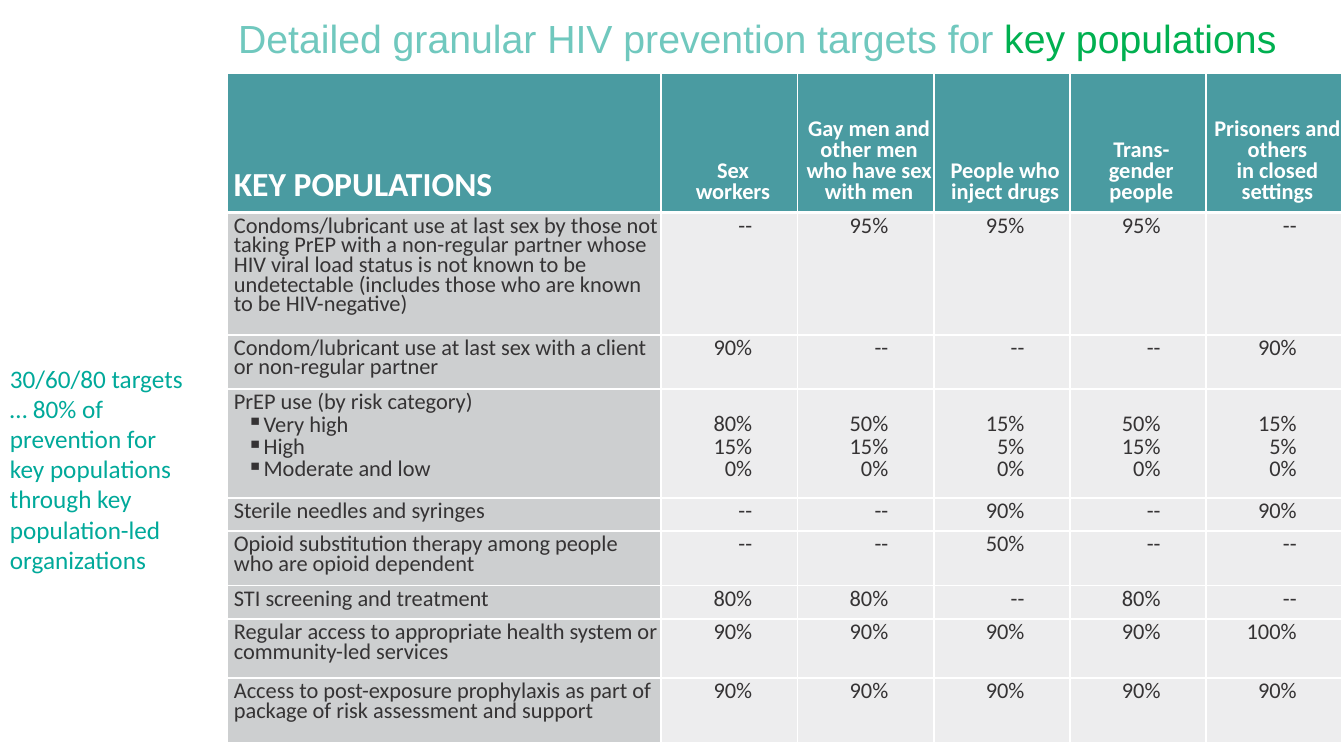
from lxml import etree
from pptx import Presentation
from pptx import util as u
from pptx.dml.color import RGBColor
from pptx.enum import text
from pptx.oxml.ns import qn

COLORS = {
    "title": "70C8BE",
    "accent": "00B050",
    "note": "00A99A",
    "header": "4A9BA1",
    "label": "CDCFD0",
    "value": "EDEDEE",
    "body": "353334",
    "white": "FFFFFF",
}

COLUMN_WIDTHS = [4.31] + [1.35] * 5
ROW_HEIGHTS = [1.38, 1.21, 0.54, 1.08, 0.33, 0.54, 0.33, 0.59, 0.64]
HEADINGS = [
    "KEY POPULATIONS",
    "Sex\vworkers",
    "Gay men and other men who have sex with men",
    "People who\vinject drugs",
    "Trans-\vgender\vpeople",
    "Prisoners and others\nin closed\vsettings",
]
TARGETS = [
    ("Condoms/lubricant use at last sex by those not taking PrEP with a "
     "non-regular partner whose HIV viral load status is not known to be "
     "undetectable (includes those who are known to be HIV-negative)",
     ["--", "95%", "95%", "95%", "--"]),
    ("Condom/lubricant use at last sex with a client or non-regular partner",
     ["90%", "--", "--", "--", "90%"]),
    ("PrEP use (by risk category)\nVery high\nHigh\nModerate and low",
     ["80%\n15%\n0%", "50%\n15%\n0%", "15%\n5%\n0%", "50%\n15%\n0%", "15%\n5%\n0%"]),
    ("Sterile needles and syringes", ["--", "--", "90%", "--", "90%"]),
    ("Opioid substitution therapy among people who are opioid dependent",
     ["--", "--", "50%", "--", "--"]),
    ("STI screening and treatment", ["80%", "80%", "--", "80%", "--"]),
    ("Regular access to appropriate health system or community-led services",
     ["90%", "90%", "90%", "90%", "100%"]),
    ("Access to post-exposure prophylaxis as part of package of risk "
     "assessment and support", ["90%"] * 5),
]


class TargetSlide:
    def __init__(self, deck):
        self.slide = deck.slides.add_slide(deck.slide_layouts[5])

    def style_run(self, run, size, color, font="Calibri", bold=False):
        run.font.name = font
        run.font.size = u.Pt(size)
        run.font.bold = bold
        run.font.color.rgb = RGBColor.from_string(COLORS[color])

    def place_margins(self, box, left, top, right, bottom):
        box.margin_left, box.margin_top = u.Inches(left), u.Inches(top)
        box.margin_right, box.margin_bottom = u.Inches(right), u.Inches(bottom)

    def title(self, lead, emphasis, left, top, width, height):
        heading = self.slide.shapes.title
        heading.left, heading.top = u.Inches(left), u.Inches(top)
        heading.width, heading.height = u.Inches(width), u.Inches(height)
        frame = heading.text_frame
        frame.auto_size = text.MSO_AUTO_SIZE.NONE
        frame.vertical_anchor = text.MSO_ANCHOR.MIDDLE
        self.place_margins(frame, 0, 0, 0, 0)
        frame.text = lead
        line = frame.paragraphs[0]
        line.alignment = text.PP_ALIGN.CENTER
        self.style_run(line.runs[0], 28, "title", "Arial")
        key_term = line.add_run()
        key_term.text = emphasis
        self.style_run(key_term, 28, "accent", "Arial")

    def note(self, wording, left, top, width, height):
        box = self.slide.shapes.add_textbox(
            u.Inches(left), u.Inches(top), u.Inches(width), u.Inches(height))
        frame = box.text_frame
        frame.word_wrap = True
        frame.text = wording
        self.style_run(frame.paragraphs[0].runs[0], 18, "note")

    def bullet(self, paragraph):
        props = paragraph._p.get_or_add_pPr()
        props.set("marL", str(u.Inches(0.25)))
        props.set("indent", str(u.Inches(-0.12)))
        etree.SubElement(props, qn("a:buChar")).set("char", "▪")
        tabs = etree.SubElement(props, qn("a:tabLst"))
        tab = etree.SubElement(tabs, qn("a:tab"))
        tab.set("pos", str(u.Inches(0.35)))
        tab.set("algn", "l")

    def borders(self, cell, top=1.5, bottom=1.5):
        props = cell._tc.get_or_add_tcPr()
        for side, width in (("L", 1.5), ("R", 1.5), ("T", top), ("B", bottom)):
            line = etree.SubElement(props, qn(f"a:ln{side}"))
            line.set("w", str(u.Pt(width)))
            fill = etree.SubElement(line, qn("a:solidFill"))
            etree.SubElement(fill, qn("a:srgbClr")).set("val", COLORS["white"])

    def cell(self, cell, wording, fill, align, spacing, size=16, color="body",
             bold=False, bulleted=False):
        cell.fill.solid()
        cell.fill.fore_color.rgb = RGBColor.from_string(COLORS[fill])
        cell.text_frame.text = wording
        paragraphs = cell.text_frame.paragraphs
        for index, paragraph in enumerate(paragraphs):
            if bulleted and index:
                self.bullet(paragraph)
            paragraph.alignment = align
            paragraph.line_spacing = u.Pt(spacing)
            if len(paragraphs) > 1 and fill != "header":
                paragraph.space_after = u.Pt(2)
            for run in paragraph.runs:
                self.style_run(run, size, color, bold=bold)

    def header_row(self, cells):
        for column, (cell, heading) in enumerate(zip(cells, HEADINGS)):
            self.borders(cell, bottom=2.25)
            self.place_margins(cell, 0.07, 0.07, 0, 0.07)
            cell.vertical_anchor = text.MSO_ANCHOR.BOTTOM
            align = text.PP_ALIGN.CENTER if column else text.PP_ALIGN.LEFT
            self.cell(cell, heading, "header", align, 15,
                      16 if column else 24, "white", True)

    def target_row(self, cells, label, values, top_border):
        has_categories = "\n" in label
        # Values of a row with categories start one line lower, beside the first category.
        value_top = 0.29 if has_categories else 0.07
        for column, (cell, wording) in enumerate(zip(cells, [label] + values)):
            self.borders(cell, top=top_border)
            if column:
                self.place_margins(cell, 0.07, value_top, 0.45, 0)
                self.cell(cell, wording, "value", text.PP_ALIGN.RIGHT, 14)
            else:
                self.place_margins(cell, 0.07, 0.07, 0, 0)
                self.cell(cell, wording, "label", text.PP_ALIGN.LEFT, 14,
                          bulleted=has_categories)

    def target_table(self, left, top):
        table = self.slide.shapes.add_table(
            len(ROW_HEIGHTS), len(COLUMN_WIDTHS), u.Inches(left), u.Inches(top),
            u.Inches(sum(COLUMN_WIDTHS)), u.Inches(sum(ROW_HEIGHTS))).table
        table.horz_banding = False
        for column, width in zip(table.columns, COLUMN_WIDTHS):
            column.width = u.Inches(width)
        for row, height in zip(table.rows, ROW_HEIGHTS):
            row.height = u.Inches(height)
        self.header_row(table.rows[0].cells)
        for index, (label, values) in enumerate(TARGETS, start=1):
            self.target_row(table.rows[index].cells, label, values,
                            2.25 if index == 1 else 1.5)


def main():
    deck = Presentation()
    deck.slide_width, deck.slide_height = u.Inches(13.33), u.Inches(7.5)
    page = TargetSlide(deck)
    page.title("Detailed granular HIV prevention targets for ", "key populations",
               2.15, 0.12, 10.72, 0.51)
    page.target_table(2.25, 0.73)
    page.note("30/60/80 targets … 80% of prevention for key populations "
              "through key population-led organizations", 0, 3.55, 1.99, 2.22)
    deck.save("out.pptx")


if __name__ == "__main__":
    main()
